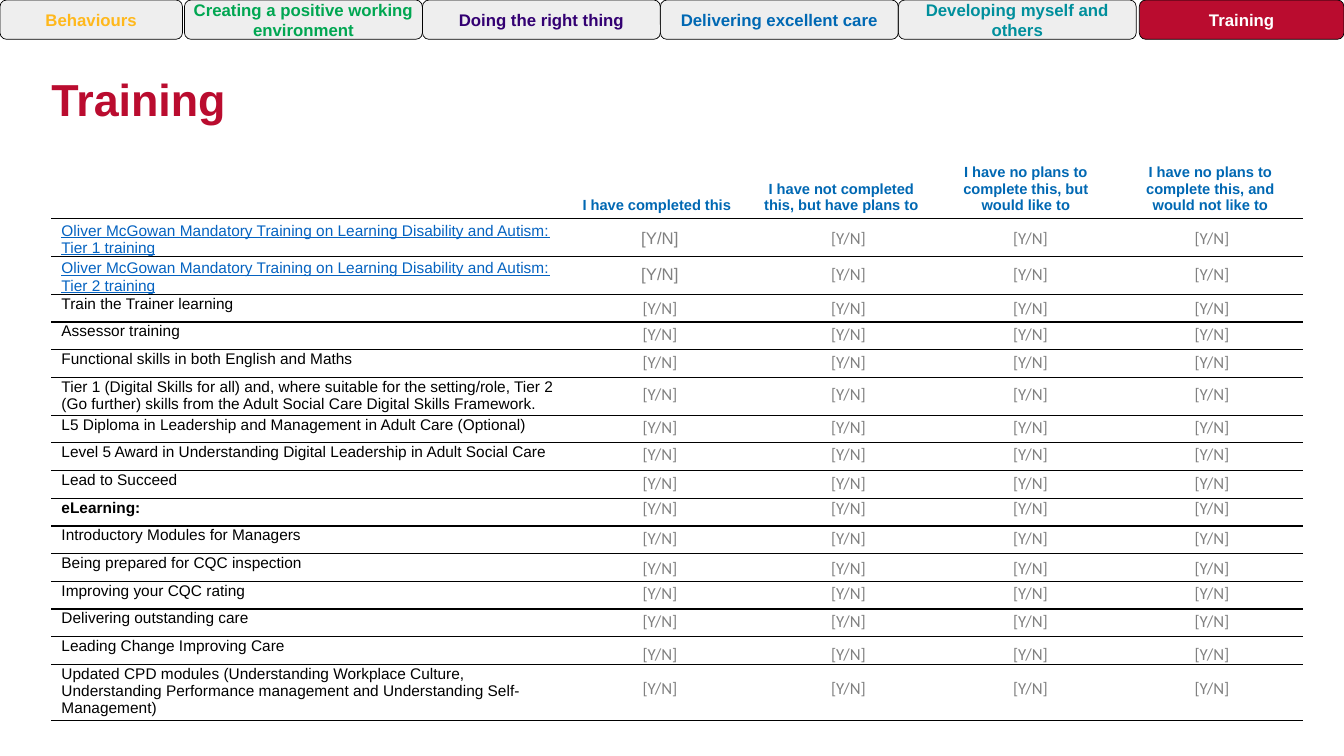
from lxml.etree import SubElement
from pptx import Presentation
from pptx.dml.color import RGBColor
from pptx.enum.shapes import MSO_SHAPE as Shape
from pptx.enum.text import MSO_ANCHOR as Anchor, PP_ALIGN as Align
from pptx.oxml import parse_xml
from pptx.oxml.ns import nsdecls, qn
from pptx.util import Inches, Pt

BLACK = RGBColor(0x00, 0x00, 0x00)
WHITE = RGBColor(0xFF, 0xFF, 0xFF)
GREY = RGBColor(0x80, 0x80, 0x80)
PALE = RGBColor(0xCA, 0xCA, 0xCA)
RED = RGBColor(0xBA, 0x0C, 0x2F)
BLUE = RGBColor(0x00, 0x68, 0xB3)
LINK = RGBColor(0x05, 0x63, 0xC1)
AMBER = RGBColor(0xFF, 0xB8, 0x1C)
GREEN = RGBColor(0x00, 0xA6, 0x51)
PURPLE = RGBColor(0x33, 0x00, 0x72)
TEAL = RGBColor(0x00, 0x8F, 0x9C)
NO_GRID = "{2D5ABB26-0587-4C30-8999-92F81FD0307C}"

# Tab bar: the first and last tabs frame four equal ones
TAB_X, TAB_W, TAB_H = 1.83, 2.36, 0.39
TABS = [
    ("Creating a positive working environment", GREEN),
    ("Doing the right thing", PURPLE),
    ("Delivering excellent care", BLUE),
    ("Developing myself and others", TEAL),
]

# Table grid: widths in inches, row heights in points by lines of text
LEFT, TOP = 0.51, 1.55
COLS = [5.09] + [1.83] * 4
HEAD_H = 44.6
ROW_H = {1: 19.8, 2: 27, 3: 40}
HEADS = [
    "",
    "I have completed this",
    "I have not completed this, but have plans to",
    "I have no plans to complete this, but would like to",
    "I have no plans to complete this, and would not like to",
]
# Course, lines of text, top of its answers
ROWS = [
    ("Oliver McGowan Mandatory Training on Learning Disability and Autism: "
     "Tier 1 training", 2, 2.21),
    ("Oliver McGowan Mandatory Training on Learning Disability and Autism: "
     "Tier 2 training", 2, 2.57),
    ("Train the Trainer learning", 1, 2.9),
    ("Assessor training", 1, 3.16),
    ("Functional skills in both English and Maths", 1, 3.44),
    ("Tier 1 (Digital Skills for all) and, where suitable for the "
     "setting/role, Tier 2 (Go further) skills from the Adult Social Care "
     "Digital Skills Framework.", 2, 3.76),
    ("L5 Diploma in Leadership and Management in Adult Care (Optional)",
     1, 4.09),
    ("Level 5 Award in Understanding Digital Leadership in Adult Social Care",
     1, 4.35),
    ("Lead to Succeed", 1, 4.64),
    ("eLearning:", 1, 4.89),
    ("Introductory Modules for Managers", 1, 5.19),
    ("Being prepared for CQC inspection", 1, 5.48),
    ("Improving your CQC rating", 1, 5.73),
    ("Delivering outstanding care", 1, 6.01),
    ("Leading Change Improving Care", 1, 6.34),
    ("Updated CPD modules (Understanding Workplace Culture, Understanding "
     "Performance management and Understanding Self-Management)", 3, 6.67),
]
LINKS = 2
# Left and width of the answers in each column
SLOTS = [(5.67, 1.75), (7.5, 1.83), (9.42, 1.6), (11.22, 1.6)]


def put(frame, text, size, color, bold=False, face="Arial",
        align=Align.CENTER):
    """Write one formatted paragraph."""
    frame.text = text
    para = frame.paragraphs[0]
    para.alignment = align
    for run in para.runs:
        font = run.font
        font.name, font.size, font.bold = face, Pt(size), bold
        font.color.rgb = color
    return para


def pad(item, left, top, right, base):
    """Set the inner margins of a cell or text frame."""
    item.margin_left, item.margin_top = Inches(left), Inches(top)
    item.margin_right, item.margin_bottom = Inches(right), Inches(base)


def add_tab(slide, left, width, text, color, fill=PALE, alpha=30):
    tab = slide.shapes.add_shape(Shape.ROUNDED_RECTANGLE, Inches(left), 0,
                                 Inches(width), Inches(TAB_H))
    tab.shadow.inherit = False
    tab.fill.solid()
    tab.fill.fore_color.rgb = fill
    if alpha < 100:
        tint = next(tab.fill._xPr.iter(qn("a:srgbClr")))
        SubElement(tint, qn("a:alpha")).set("val", str(alpha * 1000))
    tab.line.color.rgb = BLACK
    tab.line.width = Pt(0.5)
    frame = tab.text_frame
    frame.word_wrap = True
    frame.vertical_anchor = Anchor.MIDDLE
    pad(frame, 0, 0.05, 0, 0.05)
    put(frame, text, 12, color, True)


def add_title(slide, text):
    title = slide.shapes.title
    title.left, title.top = Inches(0.41), Inches(0.58)
    title.width, title.height = Inches(2.89), Inches(0.69)
    frame = title.text_frame
    frame.word_wrap = False
    frame.vertical_anchor = Anchor.TOP
    pad(frame, 0.1, 0.13, 0.1, 0.05)
    put(frame, text, 32, RED, True, align=Align.LEFT)


def rule(cell):
    """Draw the line under a cell."""
    cell._tc.get_or_add_tcPr().insert(0, parse_xml(
        f'<a:lnB {nsdecls("a")} w="12700"><a:solidFill>'
        f'<a:srgbClr val="{BLACK}"/></a:solidFill></a:lnB>'))


def add_grid(slide):
    high = Pt(HEAD_H + sum(ROW_H[lines] for _, lines, _ in ROWS))
    grid = slide.shapes.add_table(len(ROWS) + 1, len(COLS), Inches(LEFT),
                                  Inches(TOP), Inches(sum(COLS)), high).table
    grid.first_row = grid.horz_banding = False
    grid._tbl.tblPr.find(qn("a:tableStyleId")).text = NO_GRID
    for col, width in zip(grid.columns, COLS):
        col.width = Inches(width)

    # Header row
    grid.rows[0].height = Pt(HEAD_H)
    for cell, text in zip(grid.rows[0].cells, HEADS):
        cell.fill.solid()
        cell.fill.fore_color.rgb = WHITE
        cell.vertical_anchor = Anchor.BOTTOM
        pad(cell, 0.11, 0.05, 0.11, 0.05)
        put(cell.text_frame, text, 10.5, BLUE, True)

    # Course rows
    for num, (text, lines, _) in enumerate(ROWS):
        row = grid.rows[num + 1]
        row.height = Pt(ROW_H[lines])
        for cell in row.cells:
            cell.fill.background()
            pad(cell, 0.1, 0.01, 0.01, 0)
            cell.text_frame.paragraphs[0].font.size = Pt(11)
        cell, link = row.cells[0], num < LINKS
        cell.vertical_anchor = Anchor.BOTTOM if link else Anchor.TOP
        para = put(cell.text_frame, text, 11, LINK if link else BLACK,
                   text.endswith(":"), align=Align.LEFT)
        para.runs[0].font.underline = link

    for cell in grid.iter_cells():
        rule(cell)


def add_answer(slide, left, top, width, face):
    box = slide.shapes.add_textbox(Inches(left), Inches(top), Inches(width),
                                   Inches(0.3))
    box.text_frame.word_wrap = True
    put(box.text_frame, "[Y/N]", 12, GREY, face=face)


def main():
    deck = Presentation()
    deck.slide_width, deck.slide_height = Inches(13.33), Inches(7.5)
    slide = deck.slides.add_slide(deck.slide_layouts[5])

    # Tabs
    add_tab(slide, 0, 1.81, "Behaviours", AMBER)
    for num, (text, color) in enumerate(TABS):
        add_tab(slide, TAB_X + num * TAB_W, TAB_W, text, color)
    add_tab(slide, 11.3, 2.03, "Training", WHITE, RED, 100)

    # Title and table
    add_title(slide, "Training")
    add_grid(slide)

    # Answers
    for num, (_, _, top) in enumerate(ROWS):
        for slot, (left, width) in enumerate(SLOTS):
            face = "Arial" if num < LINKS and slot == 0 else "Calibri"
            add_answer(slide, left, top, width, face)

    deck.save("out.pptx")


if __name__ == "__main__":
    main()
